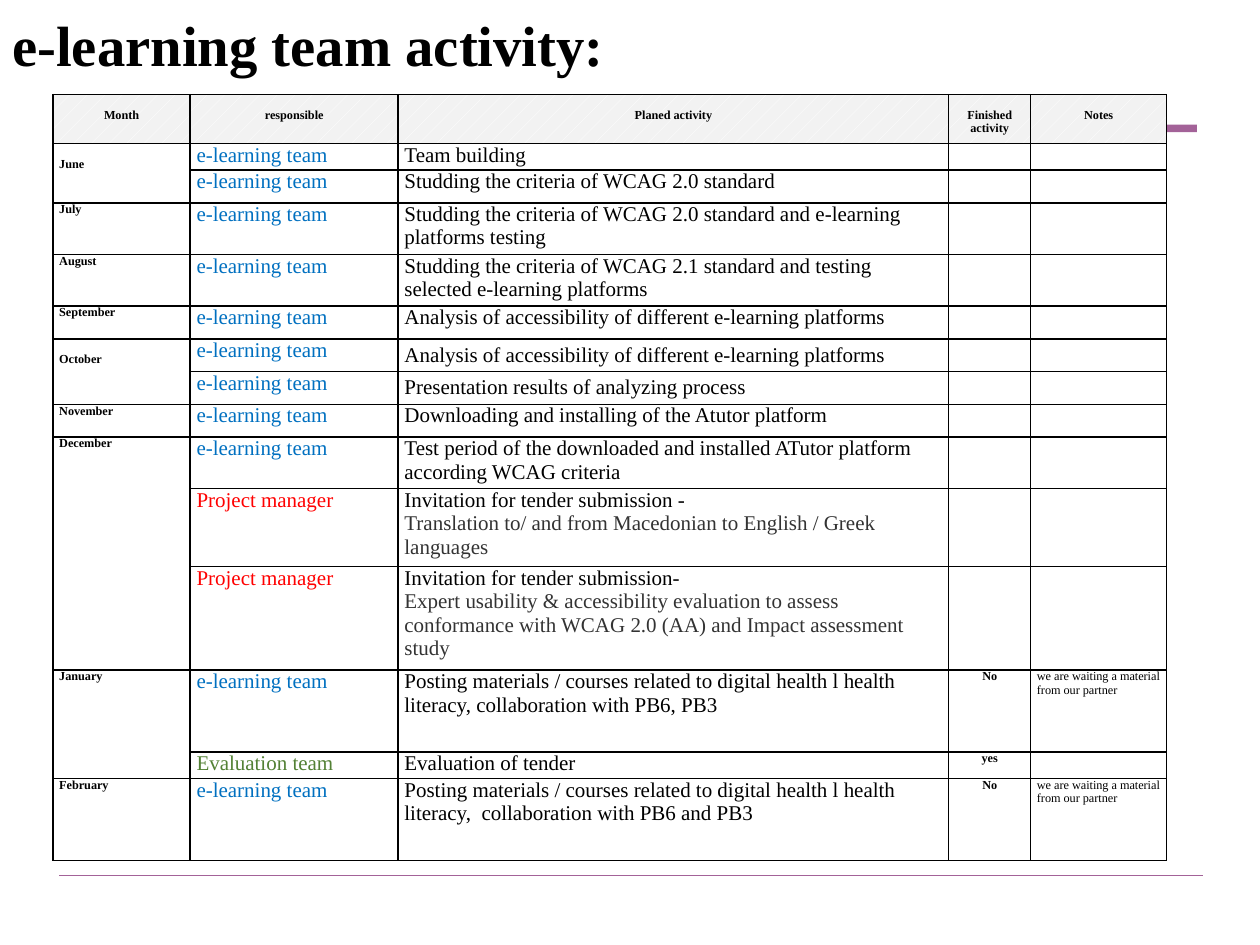
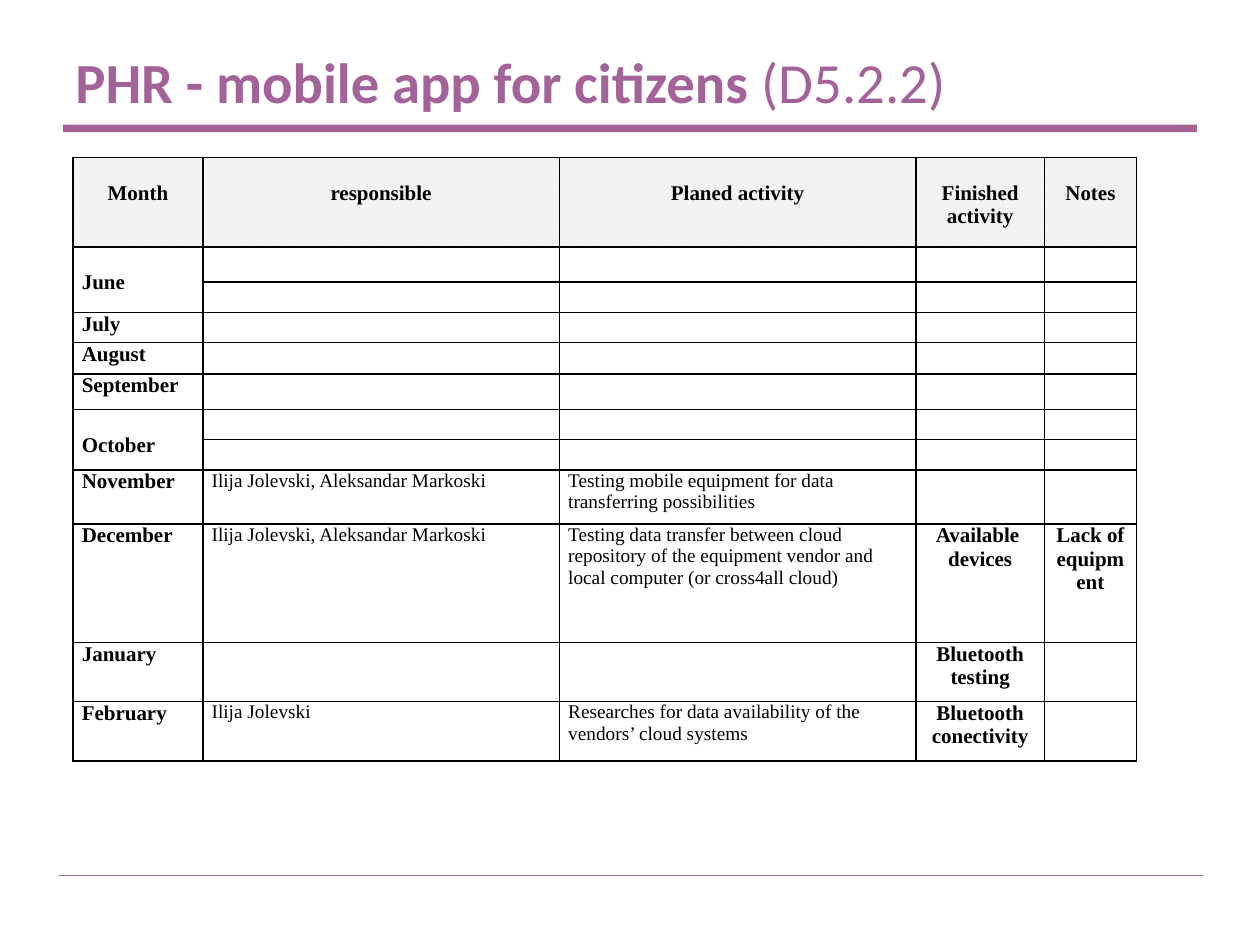
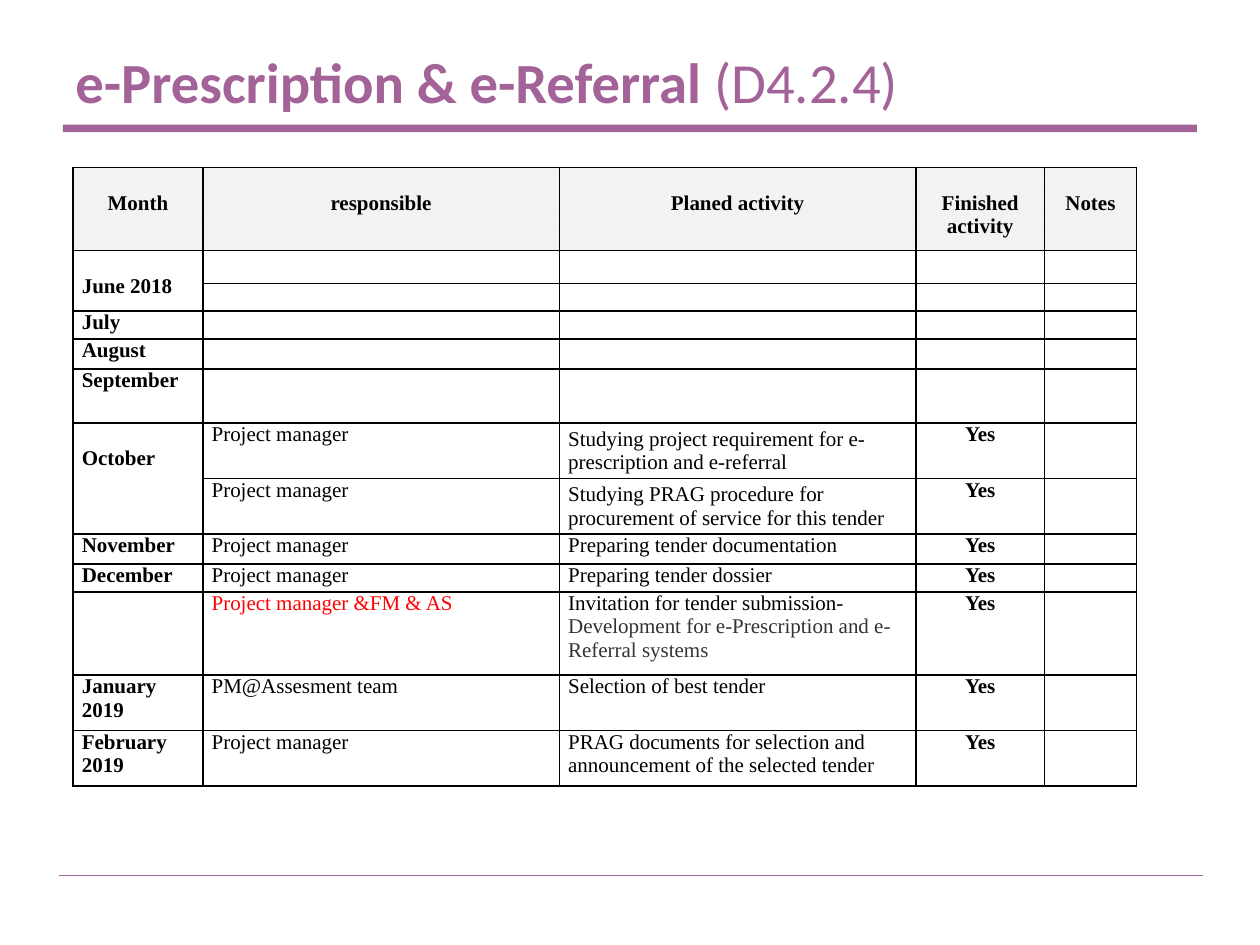
from lxml import etree
from pptx import Presentation
from pptx import util as u
from pptx.dml.color import RGBColor
from pptx.enum import dml, shapes, text
from pptx.oxml.ns import qn

PURPLE, BLACK, GREY, RED, BLUE, GREEN = "A36298", "000000", "333333", "FF0000", "0070C0", "538135"
SERIF = "Times New Roman"
HEADER = ("Month", "responsible", "Planed activity", "Finished activity", "Notes")
EDGES = ("a:lnL", "a:lnR", "a:lnT", "a:lnB")
MONTH, RESPONSIBLE, ACTIVITY, FINISHED, NOTES = range(5)
JUNE_ROW, OCTOBER_ROW = 1, 6
TEAM, MANAGER = "e-learning team", "Project manager"
WAITING = "we are waiting a material from our partner"
D5_COLUMNS = (1.03, 2.83, 2.83, 1.02, 0.73)

plans = [
    dict(
        title=("e-learning team activity:", ""), title_at=(0, 0), title_font=SERIF, title_color=BLACK,
        table_at=(0.42, 0.75), columns=(1.09, 1.65, 4.37, 0.65, 1.08),
        heights=(0.39, 0.21, 0.26, 0.41, 0.41, 0.26, 0.26, 0.26, 0.26, 0.41, 0.62, 0.82, 0.65, 0.21, 0.65),
        inset=0.05, drop=0.11, label_size=7, body_size=12, plain_notes=True,
        colors={TEAM: BLUE, MANAGER: RED, "Evaluation team": GREEN},
        rows=[
            ("June", TEAM, "Team building", "", ""),
            (None, TEAM, "Studding the criteria of WCAG 2.0 standard", "", ""),
            ("July", TEAM, "Studding the criteria of WCAG 2.0 standard and e-learning platforms testing", "", ""),
            ("August", TEAM,
             "Studding the criteria of WCAG 2.1 standard and testing selected e-learning platforms", "", ""),
            ("September", TEAM, "Analysis of accessibility of different e-learning platforms", "", ""),
            ("October", TEAM, "Analysis of accessibility of different e-learning platforms", "", ""),
            (None, TEAM, "Presentation results of analyzing process", "", ""),
            ("November", TEAM, "Downloading and installing of the Atutor platform", "", ""),
            ("December", TEAM,
             "Test period of the downloaded and installed ATutor platform according WCAG criteria", "", ""),
            (None, MANAGER, "Invitation for tender submission -\n"
             "Translation to/ and from Macedonian to English / Greek languages", "", ""),
            (None, MANAGER, "Invitation for tender submission-\n"
             "Expert usability & accessibility evaluation to assess conformance with "
             "WCAG 2.0 (AA) and Impact assessment study", "", ""),
            ("January", TEAM, "Posting materials / courses related to digital health l health literacy, "
             "collaboration with PB6, PB3", "No", WAITING),
            (None, "Evaluation team", "Evaluation of tender", "yes", ""),
            ("February", TEAM, "Posting materials / courses related to digital health l health literacy,  "
             "collaboration with PB6 and PB3", "No", WAITING),
        ],
    ),
    dict(
        title=("PHR - mobile app for citizens ", "(D5.2.2)"), title_at=(0.5, 0.3),
        title_font="Calibri", title_color=PURPLE,
        table_at=(0.58, 1.25), columns=D5_COLUMNS,
        heights=(0.71, 0.28, 0.24, 0.24, 0.25, 0.28, 0.24, 0.24, 0.43, 0.94, 0.47, 0.47),
        inset=0.07, drop=0.19, label_size=12, body_size=11, plain_notes=False, colors={},
        rows=[
            ("June", "", "", "", ""),
            (None, "", "", "", ""),
            ("July", "", "", "", ""),
            ("August", "", "", "", ""),
            ("September", "", "", "", ""),
            ("October", "", "", "", ""),
            (None, "", "", "", ""),
            ("November", "Ilija Jolevski, Aleksandar Markoski",
             "Testing mobile equipment for data transferring possibilities", "", ""),
            ("December", "Ilija Jolevski, Aleksandar Markoski",
             "Testing data transfer between cloud repository of the equipment vendor "
             "and local computer (or cross4all cloud)", "Available  devices", "Lack of equipment"),
            ("January", "", "", "Bluetooth testing", ""),
            ("February", "Ilija Jolevski",
             "Researches for data availability of the vendors’ cloud systems", "Bluetooth conectivity", ""),
        ],
    ),
    dict(
        title=("e-Prescription & e-Referral ", "(D4.2.4)"), title_at=(0.5, 0.3),
        title_font="Calibri", title_color=PURPLE,
        table_at=(0.58, 1.33), columns=D5_COLUMNS,
        heights=(0.66, 0.26, 0.22, 0.22, 0.24, 0.43, 0.44, 0.44, 0.24, 0.22, 0.66, 0.44, 0.44),
        inset=0.07, drop=0.19, label_size=12, body_size=12, plain_notes=False,
        colors={"Project manager &FM & AS": RED},
        rows=[
            ("June 2018", "", "", "", ""),
            (None, "", "", "", ""),
            ("July", "", "", "", ""),
            ("August", "", "", "", ""),
            ("September", "", "", "", ""),
            ("October", MANAGER, "Studying project requirement for e-prescription and e-referral", "Yes", ""),
            (None, MANAGER, "Studying PRAG procedure for procurement of service for this tender", "Yes", ""),
            ("November", MANAGER, "Preparing tender documentation", "Yes", ""),
            ("December", MANAGER, "Preparing tender dossier", "Yes", ""),
            ("", "Project manager &FM & AS", "Invitation for tender submission-\n"
             "Development for e-Prescription and e-Referral systems", "Yes", ""),
            ("January\n2019", "PM@Assesment team", "Selection of best tender", "Yes", ""),
            ("February\n2019", MANAGER,
             "PRAG documents for selection and announcement of the selected tender", "Yes", ""),
        ],
    ),
]


def rgb(value):
    return RGBColor.from_string(value)


def style(font, name, size, color, bold=None):
    font.name, font.size, font.bold = name, u.Pt(size), bold
    font.color.rgb = rgb(color)


deck = Presentation()
deck.slide_width, deck.slide_height = u.Inches(10), u.Inches(7.5)

for plan in plans:
    page = deck.slides.add_slide(deck.slide_layouts[6])

    footer = page.shapes.add_connector(
        shapes.MSO_CONNECTOR.STRAIGHT, u.Inches(0.47), u.Inches(6.95), u.Inches(9.55), u.Inches(6.95))
    footer.line.color.rgb = rgb(PURPLE)
    footer.line.width = u.Pt(0.75)
    etree.SubElement(footer._element.spPr, qn("a:effectLst"))

    band = page.shapes.add_shape(
        shapes.MSO_SHAPE.RECTANGLE, u.Inches(0.5), u.Inches(0.99), u.Inches(9), u.Inches(0.06))
    band.shadow.inherit = False
    band.fill.solid()
    band.fill.fore_color.rgb = rgb(PURPLE)
    band.line.fill.background()

    left, top = plan["title_at"]
    box = page.shapes.add_textbox(u.Inches(left), u.Inches(top), u.Inches(9), u.Inches(0.69))
    box.text_frame.word_wrap = True
    box.text_frame.vertical_anchor = text.MSO_ANCHOR.MIDDLE
    para = box.text_frame.paragraphs[0]
    style(para.font, plan["title_font"], 32.4, plan["title_color"])
    for words, bold in zip(plan["title"], (True, False)):
        if words:
            span = para.add_run()
            span.text = words
            span.font.bold = bold

    left, top = plan["table_at"]
    rows = [HEADER] + plan["rows"]
    table = page.shapes.add_table(
        len(rows), len(HEADER), u.Inches(left), u.Inches(top),
        u.Inches(sum(plan["columns"])), u.Inches(sum(plan["heights"]))).table
    table.first_row = table.horz_banding = False
    for column, width in zip(table.columns, plan["columns"]):
        column.width = u.Inches(width)
    for row, height in zip(table.rows, plan["heights"]):
        row.height = u.Inches(height)

    month_row = 0
    for r, row in enumerate(rows):
        header = r == 0
        for c, words in enumerate(row):
            cell = table.cell(r, c)
            lowered = header or (c == MONTH and r in (JUNE_ROW, OCTOBER_ROW))
            cell.margin_left = cell.margin_right = u.Inches(plan["inset"])
            cell.margin_top = u.Inches(plan["drop"] if lowered else 0)
            cell.margin_bottom = 0
            if c == ACTIVITY and r in (OCTOBER_ROW, OCTOBER_ROW + 1):
                cell.vertical_anchor = text.MSO_ANCHOR.MIDDLE

            for edge in EDGES:
                border = etree.SubElement(cell._tc.get_or_add_tcPr(), qn(edge), w=str(u.Pt(1)))
                paint = etree.SubElement(border, qn("a:solidFill"))
                etree.SubElement(paint, qn("a:srgbClr"), val=BLACK)
            if header:
                cell.fill.patterned()
                cell.fill.pattern = dml.MSO_PATTERN.PERCENT_5
                cell.fill.fore_color.rgb = rgb("FFFFFF")
                cell.fill.back_color.rgb = rgb("F2F2F2")
            else:
                cell.fill.background()

            body = not header and c in (RESPONSIBLE, ACTIVITY)
            plain = body or (not header and c == NOTES and plan["plain_notes"])
            size = plan["body_size"] if body else plan["label_size"]
            if not words:
                etree.SubElement(cell.text_frame.paragraphs[0]._p, qn("a:endParaRPr"),
                                 sz=str(plan["label_size"] * 100))
                continue
            cell.text = words
            for i, para in enumerate(cell.text_frame.paragraphs):
                color = GREY if c == ACTIVITY and i else plan["colors"].get(words, BLACK)
                style(para.font, SERIF, size, color, not plain)
                if header or (c in (FINISHED, NOTES) and not plain):
                    para.alignment = text.PP_ALIGN.CENTER

        if row[MONTH] is not None:
            month_row = r
        elif r + 1 == len(rows) or rows[r + 1][MONTH] is not None:
            table.cell(month_row, MONTH).merge(table.cell(r, MONTH))

deck.save("out.pptx")
